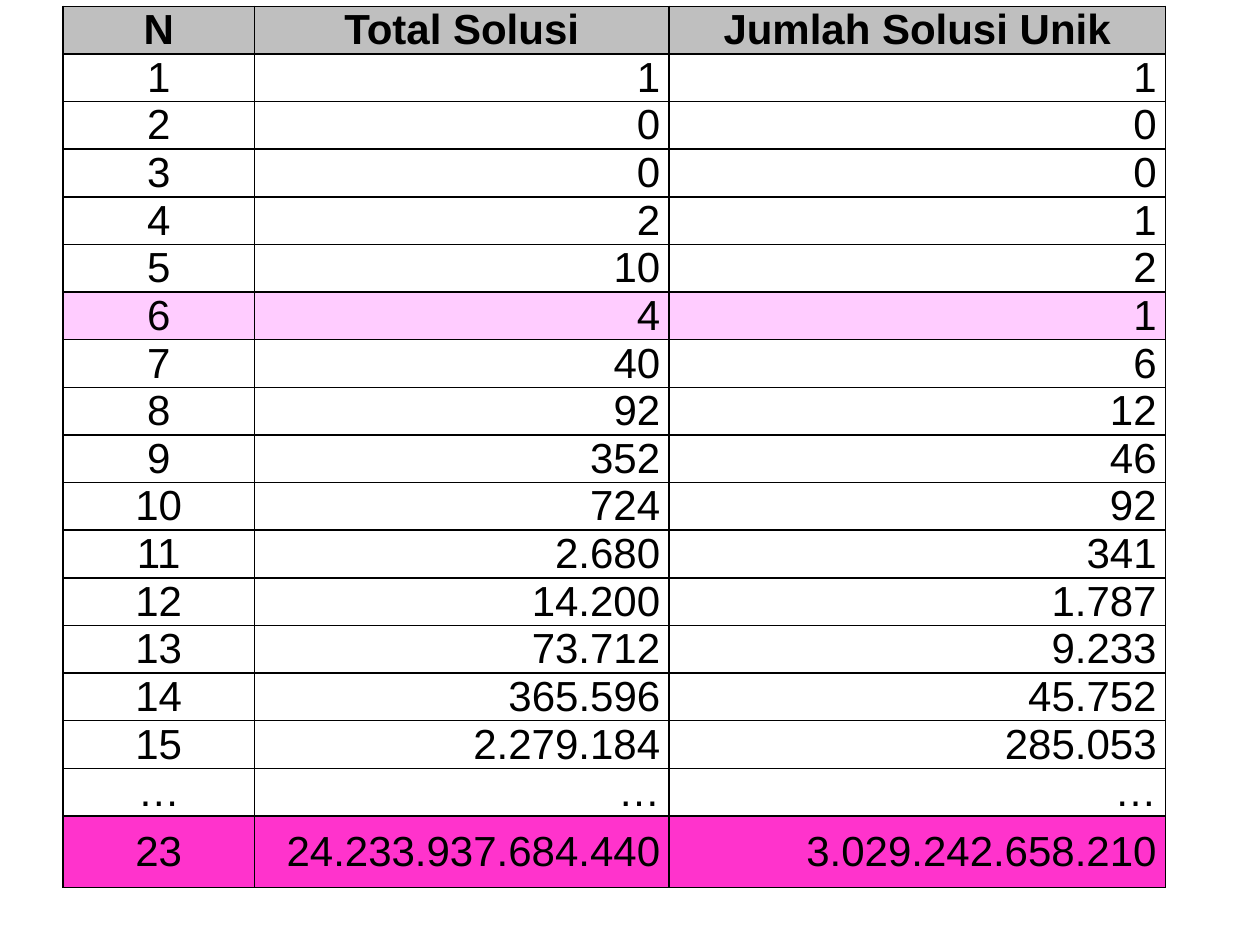
from lxml.etree import SubElement
from pptx import Presentation
from pptx.dml.color import RGBColor as RGB
from pptx.enum.text import MSO_ANCHOR as Anchor, PP_ALIGN as Align
from pptx.oxml.ns import qn
from pptx.util import Inches, Pt

COLORS = {"text": "000000", "border": "000000", "header": "BFBFBF",
          "six": "FFCCFF", "last": "FF33CC"}
ROWS = [
    ("N", "Total Solusi", "Jumlah Solusi Unik"),
    ("1", "1", "1"),
    ("2", "0", "0"),
    ("3", "0", "0"),
    ("4", "2", "1"),
    ("5", "10", "2"),
    ("6", "4", "1"),
    ("7", "40", "6"),
    ("8", "92", "12"),
    ("9", "352", "46"),
    ("10", "724", "92"),
    ("11", "2.680", "341"),
    ("12", "14.200", "1.787"),
    ("13", "73.712", "9.233"),
    ("14", "365.596", "45.752"),
    ("15", "2.279.184", "285.053"),
    ("…", "…", "…"),
    ("23", "24.233.937.684.440", "3.029.242.658.210"),
]
ROW_FILLS = {"N": "header", "6": "six", "23": "last"}
COL_WIDTHS = [1.52, 3.29, 3.94]
LEFT, TOP, HEIGHT, LAST_HEIGHT = 0.5, 0.05, 7.0, 0.57
CELL = {"margin_left": Inches(0.07), "margin_right": Inches(0.07),
        "margin_top": 0, "margin_bottom": 0, "vertical_anchor": Anchor.MIDDLE}
FONT = {"name": "Arial", "size": Pt(24)}


def apply(obj, values):
    for name, value in values.items():
        setattr(obj, name, value)


def add_borders(cell):
    tc_pr = cell._tc.get_or_add_tcPr()
    for side in ("lnL", "lnR", "lnT", "lnB"):
        ln = SubElement(tc_pr, qn(f"a:{side}"), w=str(Pt(1)))
        fill = SubElement(ln, qn("a:solidFill"))
        SubElement(fill, qn("a:srgbClr"), val=COLORS["border"])


def fill_cell(cell, text, align, bold, color):
    apply(cell, CELL)
    add_borders(cell)
    if color:
        cell.fill.solid()
        cell.fill.fore_color.rgb = RGB.from_string(COLORS[color])
    else:
        cell.fill.background()
    p = cell.text_frame.paragraphs[0]
    p.alignment = align
    r = p.add_run()
    r.text = text
    apply(r.font, {**FONT, "bold": bold})
    r.font.color.rgb = RGB.from_string(COLORS["text"])


def main():
    prs = Presentation()
    prs.slide_width, prs.slide_height = Inches(10), Inches(7.5)
    s = prs.slides.add_slide(prs.slide_layouts[6])
    table = s.shapes.add_table(
        len(ROWS), len(COL_WIDTHS), Inches(LEFT), Inches(TOP),
        Inches(sum(COL_WIDTHS)), Inches(HEIGHT)).table
    apply(table, {"first_row": False, "horz_banding": False})
    for col, width in zip(table.columns, COL_WIDTHS):
        col.width = Inches(width)
    for row in table.rows:
        row.height = Inches((HEIGHT - LAST_HEIGHT) / (len(ROWS) - 1))
    table.rows[len(ROWS) - 1].height = Inches(LAST_HEIGHT)
    for i, values in enumerate(ROWS):
        for j, text in enumerate(values):
            align = Align.CENTER if i == 0 or j == 0 else Align.RIGHT
            fill_cell(table.cell(i, j), text, align, i == 0, ROW_FILLS.get(values[0]))
    prs.save("out.pptx")


if __name__ == "__main__":
    main()
